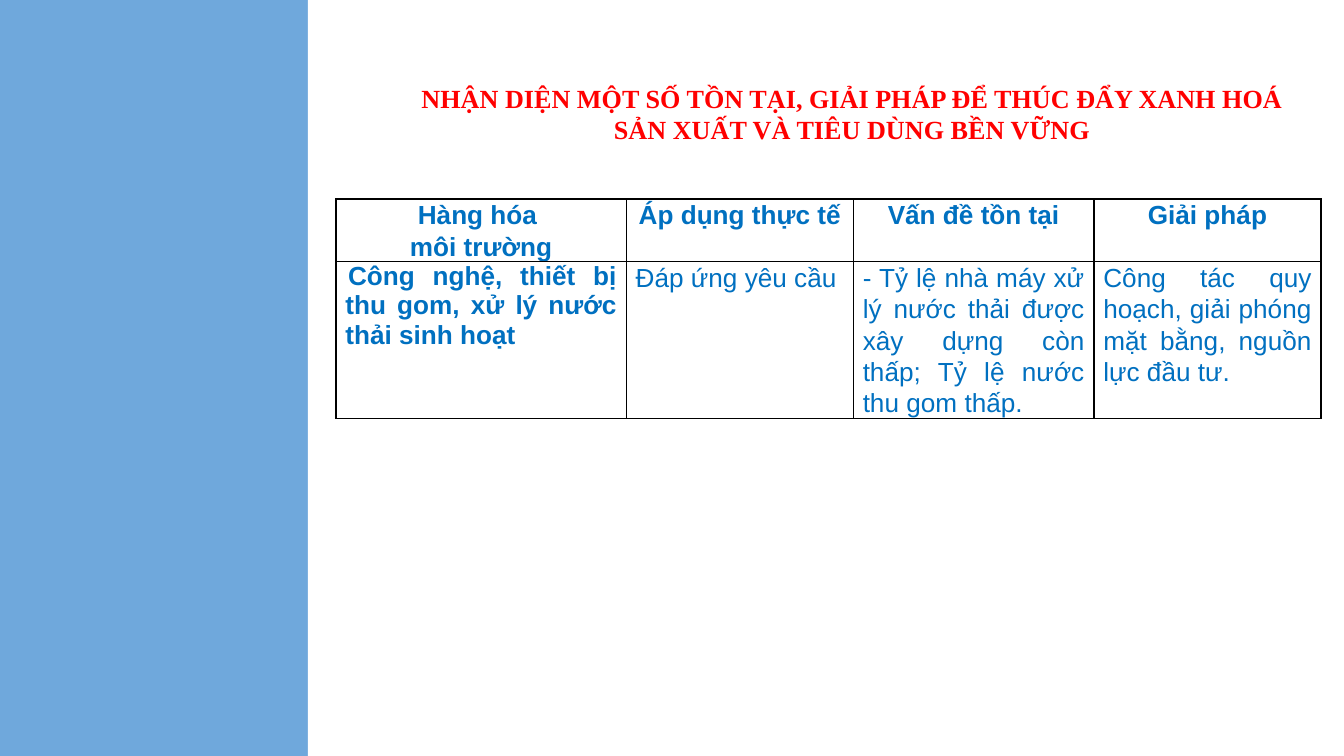
from lxml import etree
from pptx import Presentation
from pptx.dml.color import RGBColor
from pptx.enum import shapes, text
from pptx.oxml import ns
from pptx.util import Inches, Pt

COLORS = {"side": "6FA8DC", "panel": "FFFFFF", "title": "FF0000",
          "text": "0070C0", "border": "000000"}
CENTER, JUSTIFY, LEFT = (text.PP_ALIGN.CENTER, text.PP_ALIGN.JUSTIFY,
                         text.PP_ALIGN.LEFT)
COL_WIDTHS = [2.16, 1.69, 1.79, 1.69]
ROW_HEIGHTS = [0.43, 1.09]
HEADERS = ["Hàng hóa \nmôi trường", "Áp dụng thực tế", "Vấn đề tồn tại",
           "Giải pháp"]
BODY = [
    ("Công nghệ, thiết bị thu gom, xử lý nước thải sinh hoạt", JUSTIFY),
    ("Đáp ứng yêu cầu", LEFT),
    ("- Tỷ lệ nhà máy xử lý nước thải được xây dựng còn thấp; "
     "Tỷ lệ nước thu gom thấp.", JUSTIFY),
    ("Công tác quy hoạch, giải phóng mặt bằng, nguồn lực đầu tư.", JUSTIFY),
]


def rgb(name):
    return RGBColor.from_string(COLORS[name])


def style_font(p, name, color, bold):
    p.font.name = name
    p.font.size = Pt(14)
    p.font.bold = bold
    p.font.color.rgb = rgb(color)


def add_backdrop(slide, x, y, w, h):
    fill = slide.background.fill
    fill.solid()
    fill.fore_color.rgb = rgb("side")
    sp = slide.shapes.add_shape(shapes.MSO_SHAPE.RECTANGLE, x, y, w, h)
    sp.shadow.inherit = False
    sp.fill.solid()
    sp.fill.fore_color.rgb = rgb("panel")
    sp.line.fill.background()


def add_title(slide, x, y, w, h):
    sp = slide.shapes.title
    sp.left, sp.top, sp.width, sp.height = x, y, w, h
    tf = sp.text_frame
    tf.word_wrap = True
    tf.auto_size = text.MSO_AUTO_SIZE.NONE
    tf.vertical_anchor = text.MSO_ANCHOR.TOP
    tf.text = ("NHẬN DIỆN MỘT SỐ TỒN TẠI, GIẢI PHÁP ĐỂ THÚC ĐẨY XANH HOÁ "
               "SẢN XUẤT VÀ TIÊU DÙNG BỀN VỮNG")
    p = tf.paragraphs[0]
    p.alignment = CENTER
    style_font(p, "Times New Roman", "title", True)


def set_borders(cell):
    tc_pr = cell._tc.get_or_add_tcPr()
    for i, tag in enumerate(("a:lnL", "a:lnR", "a:lnT", "a:lnB")):
        ln = etree.Element(ns.qn(tag), w=str(Pt(0.75)))
        fill = etree.SubElement(ln, ns.qn("a:solidFill"))
        etree.SubElement(fill, ns.qn("a:srgbClr"), val=COLORS["border"])
        tc_pr.insert(i, ln)


def fill_cell(cell, content, align, bold, spacing=1.07):
    cell.fill.background()
    set_borders(cell)
    cell.margin_left = cell.margin_right = Inches(0.07)
    cell.margin_top = cell.margin_bottom = 0
    cell.text = content
    for p in cell.text_frame.paragraphs:
        p.alignment = align
        p.line_spacing = spacing
        style_font(p, "Arial", "text", bold)


def add_goods_table(slide, x, y, w, h):
    table = slide.shapes.add_table(len(ROW_HEIGHTS), len(COL_WIDTHS),
                                   x, y, w, h).table
    table.first_row = table.horz_banding = False
    for col, width in zip(table.columns, COL_WIDTHS):
        col.width = Inches(width)
    for row, height in zip(table.rows, ROW_HEIGHTS):
        row.height = Inches(height)
    for c, header in enumerate(HEADERS):
        fill_cell(table.cell(0, c), header, CENTER, True)
    for c, (content, align) in enumerate(BODY):
        first = c == 0
        fill_cell(table.cell(1, c), content, align, first,
                  1.0 if first else 1.07)
    p_pr = table.cell(1, 0).text_frame.paragraphs[0]._p.get_or_add_pPr()
    p_pr.set("marL", "0")
    p_pr.set("indent", str(Inches(0.02)))


def main():
    prs = Presentation()
    prs.slide_width = Inches(10)
    prs.slide_height = prs.slide_width * 9 // 16
    slide = prs.slides.add_slide(prs.slide_layouts[5])
    panel_left = Inches(2.29)
    add_backdrop(slide, panel_left, 0, prs.slide_width - panel_left,
                 prs.slide_height)
    add_goods_table(slide, Inches(2.5), Inches(1.48),
                    Inches(sum(COL_WIDTHS)), Inches(sum(ROW_HEIGHTS)))
    add_title(slide, Inches(2.93), Inches(0.56), Inches(6.82), Inches(0.57))
    title = slide.shapes.title._element
    title.getparent().append(title)
    prs.save("out.pptx")


if __name__ == "__main__":
    main()
